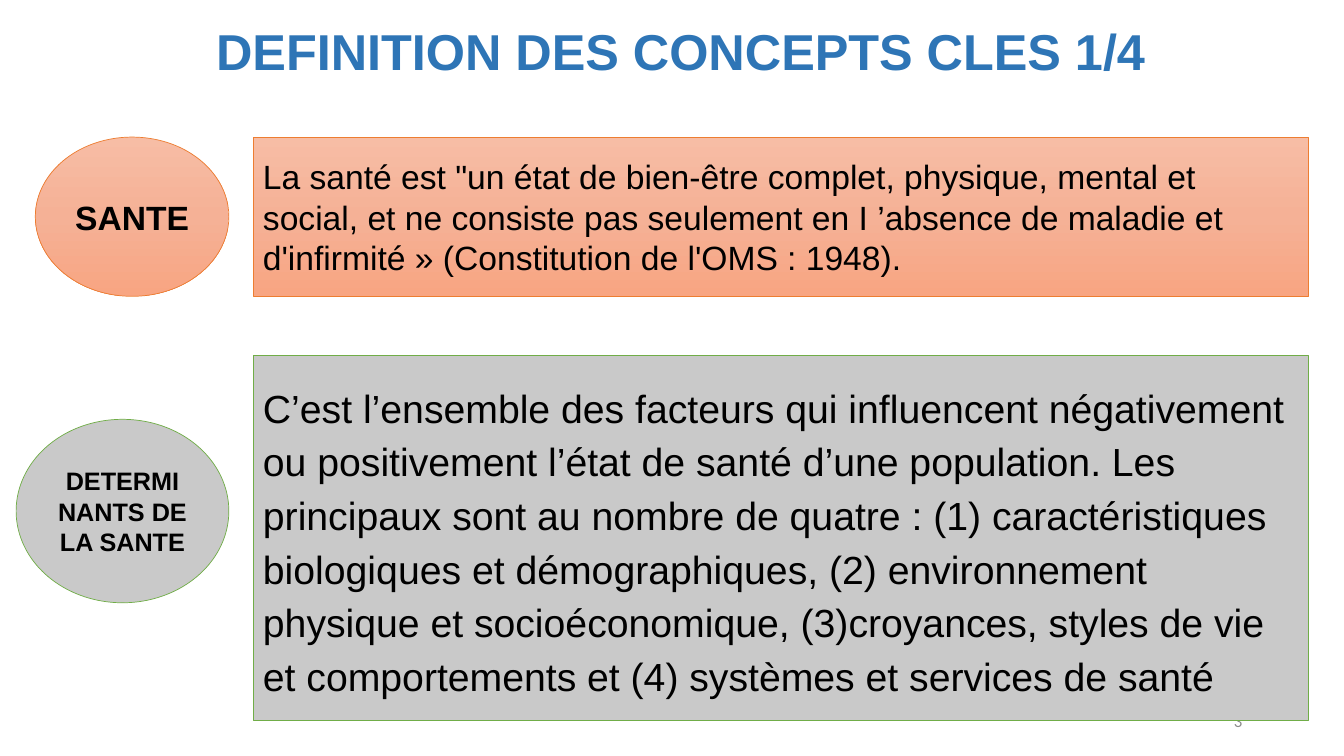
from copy import deepcopy

from lxml.etree import SubElement
from pptx import Presentation
from pptx.dml.color import RGBColor
from pptx.enum.shapes import MSO_SHAPE as Shape
from pptx.enum.text import MSO_ANCHOR as Anchor, MSO_AUTO_SIZE as AutoSize, PP_ALIGN as Align
from pptx.oxml.ns import qn
from pptx.util import Inches, Pt

BLACK = RGBColor(0x00, 0x00, 0x00)
BLUE = RGBColor(0x2E, 0x75, 0xB6)
NAVY = RGBColor(0x33, 0x3F, 0x50)
NUMBER_GRAY = RGBColor(0x8C, 0x8C, 0x8C)
ORANGE = RGBColor(0xED, 0x7D, 0x31)
GREEN = RGBColor(0x70, 0xAD, 0x47)
SILVER = RGBColor(0xC9, 0xC9, 0xC9)
PEACH = (RGBColor(0xF7, 0xBD, 0xA5), RGBColor(0xF5, 0xB1, 0x96), RGBColor(0xF8, 0xA5, 0x82))

HEALTH = (
    "La santé est \"un état de bien-être complet, physique, mental et social, "
    "et ne consiste pas seulement en I ’absence de maladie et d'infirmité » "
    "(Constitution de l'OMS : 1948)."
)
DETERMINANTS = (
    "C’est l’ensemble des facteurs qui influencent négativement ou positivement "
    "l’état de santé d’une population. Les principaux sont au nombre de quatre : "
    "(1) caractéristiques biologiques et démographiques, (2) environnement physique "
    "et socioéconomique, (3)croyances, styles de vie et comportements et "
    "(4) systèmes et services de santé"
)


def write_text(shape, text, size, color=BLACK, bold=False, align=Align.LEFT,
               font="Arial", spacing=1.0):
    frame = shape.text_frame
    frame.word_wrap = True
    frame.auto_size = AutoSize.NONE
    frame.vertical_anchor = Anchor.MIDDLE
    paragraph = frame.paragraphs[0]
    paragraph.alignment = align
    paragraph.line_spacing = spacing
    run = paragraph.add_run()
    run.text = text
    run.font.name = font
    run.font.size = Pt(size)
    run.font.bold = bold
    run.font.color.rgb = color
    return run


def outline_text(run, color, width):
    properties = run.font._element
    line = SubElement(properties, qn("a:ln"), w=str(Pt(width)))
    fill = SubElement(line, qn("a:solidFill"))
    SubElement(fill, qn("a:srgbClr"), val=str(color))
    properties.insert(0, line)


def fill_shape(shape, colors):
    if len(colors) == 1:
        shape.fill.solid()
        shape.fill.fore_color.rgb = colors[0]
        return
    shape.fill.gradient()
    shape.fill.gradient_angle = 270
    stop_list = shape._element.spPr.find(".//" + qn("a:gsLst"))
    stop_list.append(deepcopy(stop_list[0]))
    for index, (stop, color) in enumerate(zip(shape.fill.gradient_stops, colors)):
        stop.position = index / (len(colors) - 1)
        stop.color.rgb = color


def add_title(slide, box, text):
    title = slide.shapes.title
    title.left, title.top, title.width, title.height = map(Inches, box)
    run = write_text(title, text, 36, color=BLUE, bold=True, align=Align.CENTER, spacing=0.9)
    outline_text(run, NAVY, 1)


def add_number(slide, box, text):
    number = slide.shapes.add_textbox(*map(Inches, box))
    write_text(number, text, 12, color=NUMBER_GRAY, align=Align.RIGHT, font="Calibri")


def add_concept(slide, box, label_size, label, definition, colors, line_color):
    left, top, width, height = box
    label_width, label_height = label_size
    label_left = left - 0.24 - label_width
    label_top = top + (height - label_height) / 2 - (0.27 if label_height < height else 0)
    group = slide.shapes.add_group_shape()
    parts = (
        (Shape.OVAL, (label_left, label_top, label_width, label_height), label),
        (Shape.RECTANGLE, box, definition),
    )
    for kind, part_box, text_format in parts:
        shape = group.shapes.add_shape(kind, *map(Inches, part_box))
        shape.shadow.inherit = False
        fill_shape(shape, colors)
        shape.line.color.rgb = line_color
        shape.line.width = Pt(0.5)
        write_text(shape, **text_format)


def main():
    presentation = Presentation()
    presentation.slide_width = Inches(13.33)
    presentation.slide_height = Inches(7.5)
    slide = presentation.slides.add_slide(presentation.slide_layouts[5])
    add_title(slide, (0.17, 0, 13.17, 1.07), "DEFINITION DES CONCEPTS CLES 1/4")
    add_number(slide, (9.42, 6.95, 3, 0.4), "3")
    add_concept(
        slide, (2.51, 1.36, 10.47, 1.58), (1.92, 1.58),
        dict(text="SANTE", size=24, bold=True, align=Align.CENTER),
        dict(text=HEALTH, size=24),
        PEACH, ORANGE,
    )
    add_concept(
        slide, (2.51, 3.53, 10.47, 3.62), (2.11, 1.82),
        dict(text="DETERMI NANTS DE LA SANTE", size=18, bold=True, align=Align.CENTER),
        dict(text=DETERMINANTS, size=28, spacing=1.14),
        (SILVER,), GREEN,
    )
    presentation.save("out.pptx")


if __name__ == "__main__":
    main()
